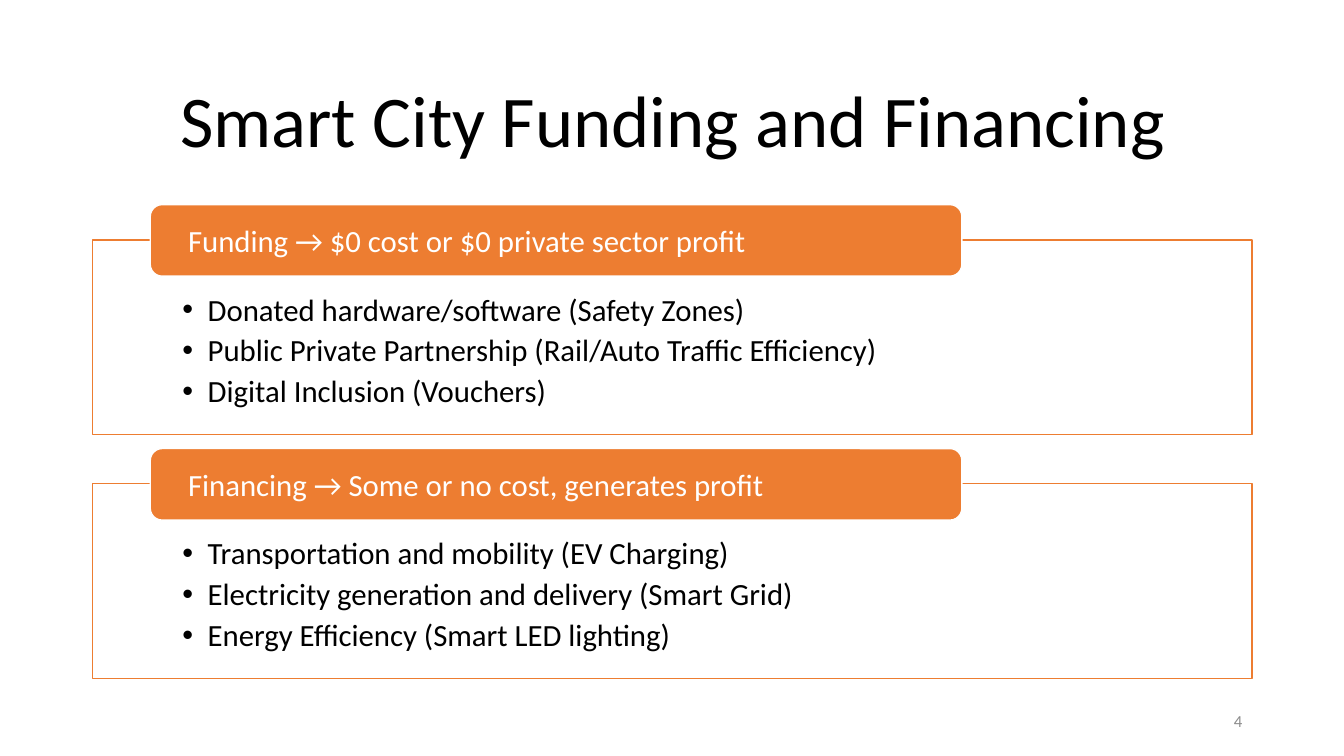
import pptx
import pptx.util
import pptx.dml.color
import pptx.enum.shapes
import pptx.enum.text
import pptx.oxml
import pptx.oxml.ns

Inches, Pt = pptx.util.Inches, pptx.util.Pt
RGBColor = pptx.dml.color.RGBColor
MSO_SHAPE = pptx.enum.shapes.MSO_SHAPE
ANCHOR = pptx.enum.text.MSO_ANCHOR
ALIGN = pptx.enum.text.PP_ALIGN

BLACK = RGBColor(0x00, 0x00, 0x00)
WHITE = RGBColor(0xFF, 0xFF, 0xFF)
ORANGE = RGBColor(0xED, 0x7D, 0x31)
GREY = RGBColor(0x8C, 0x8C, 0x8C)

LEFT, WIDTH = 0.92, 11.5
PANEL_TOP, PANEL_PITCH, PANEL_HEIGHT = 2.38, 2.42, 1.93
PANELS = [
    ("Funding → $0 cost or $0 private sector profit",
     ["Donated hardware/software (Safety Zones)",
      "Public Private Partnership (Rail/Auto Traffic Efficiency)",
      "Digital Inclusion (Vouchers)"]),
    ("Financing → Some or no cost, generates profit",
     ["Transportation and mobility (EV Charging)",
      "Electricity generation and delivery (Smart Grid)",
      "Energy Efficiency (Smart LED lighting)"]),
]


def write(sp, lines, size, color, align, anchor, margins=(0.1, 0.05, 0.1, 0.05)):
    """Fill a shape with one paragraph per line; margins are left, top, right, bottom."""
    tf = sp.text_frame
    tf.word_wrap = True
    tf.vertical_anchor = anchor
    tf.margin_left, tf.margin_top, tf.margin_right, tf.margin_bottom = map(Inches, margins)
    tf.text = "\n".join(lines)
    for p in tf.paragraphs:
        p.alignment = align
        for r in p.runs:
            r.font.name, r.font.size = "Calibri", Pt(size)
            r.font.color.rgb = color
    return tf


def add_text(s, box, text, size, color, align):
    sp = s.shapes.add_textbox(*map(Inches, box))
    return write(sp, [text], size, color, align, ANCHOR.MIDDLE)


def add_block(s, kind, box, fill, line):
    sp = s.shapes.add_shape(kind, *map(Inches, box))
    sp.shadow.inherit = False
    sp.fill.solid()
    sp.fill.fore_color.rgb = fill
    sp.line.color.rgb = line
    sp.line.width = Pt(1)
    return sp


def add_bullet(p):
    pPr = p._p.get_or_add_pPr()
    pPr.set("marL", str(Inches(0.25)))
    pPr.set("indent", str(-Inches(0.25)))
    ns = pptx.oxml.ns.nsdecls("a")
    pPr.append(pptx.oxml.parse_xml(f'<a:buFont {ns} typeface="Arial"/>'))
    pPr.append(pptx.oxml.parse_xml(f'<a:buChar {ns} char="•"/>'))


def add_panel(s, x, y, w, h, heading, items):
    # Outlined box with bullets
    frame = add_block(s, MSO_SHAPE.RECTANGLE, (x, y, w, h), WHITE, ORANGE)
    tf = write(frame, items, 22, BLACK, ALIGN.LEFT, ANCHOR.TOP, (0.89, 0.5, 0.89, 0.17))
    for p in tf.paragraphs:
        p.space_after = Pt(2.8)
        add_bullet(p)
    # Heading tab across the top edge
    tab = add_block(s, MSO_SHAPE.ROUNDED_RECTANGLE,
                    (x + 0.57, y - 0.35, 0.7 * w, 0.71), ORANGE, WHITE)
    write(tab, [heading], 22, WHITE, ALIGN.LEFT, ANCHOR.MIDDLE, (0.34, 0, 0.34, 0))


def build_slide(prs):
    s = prs.slides.add_slide(prs.slide_layouts[6])
    # Title
    title = add_text(s, (LEFT, 0.61, WIDTH, 1.24), "Smart City Funding and Financing",
                     52, BLACK, ALIGN.CENTER)
    title.paragraphs[0].line_spacing = 0.9
    # Panels
    for i, (heading, items) in enumerate(PANELS):
        add_panel(s, LEFT, PANEL_TOP + i * PANEL_PITCH, WIDTH, PANEL_HEIGHT, heading, items)
    # Slide number
    add_text(s, (9.42, 6.95, 3, 0.4), "4", 12, GREY, ALIGN.RIGHT)


def main():
    prs = pptx.Presentation()
    prs.slide_width, prs.slide_height = Inches(13.33), Inches(7.5)
    build_slide(prs)
    prs.save("out.pptx")


if __name__ == "__main__":
    main()
